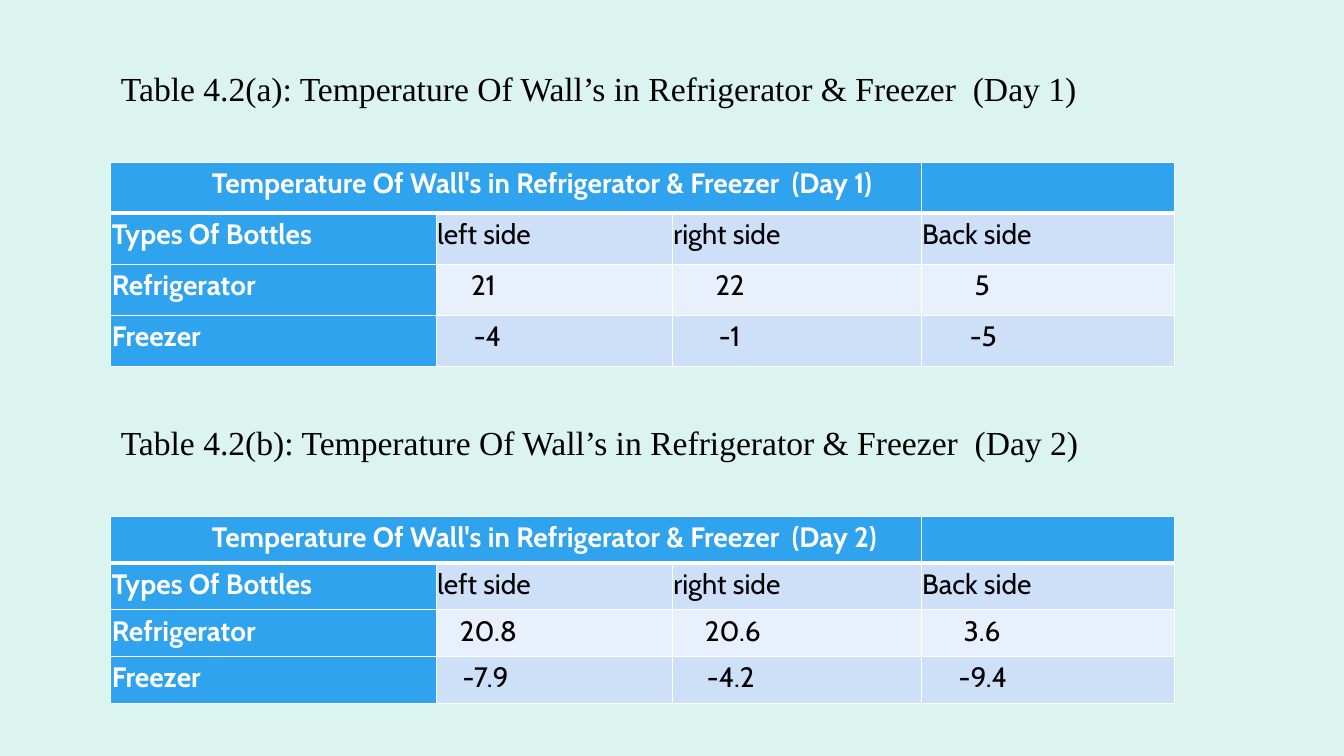
from dataclasses import dataclass

from lxml import etree
from pptx import Presentation
from pptx.dml.color import RGBColor
from pptx.enum.text import MSO_ANCHOR, MSO_AUTO_SIZE, PP_ALIGN
from pptx.oxml.ns import qn
from pptx.util import Pt


@dataclass(frozen=True)
class Theme:
    backdrop: str = "DBF4EF"
    header: str = "2FA3EE"
    band_dark: str = "CDE0F8"
    band_light: str = "E8F0FC"
    white: str = "FFFFFF"
    black: str = "000000"
    caption_font: str = "Times New Roman"
    table_font: str = "Cabin"
    caption_size: int = 24
    table_size: int = 20


THEME = Theme()
LEFT, WIDTH = 79.2, 759.6
COLUMN_WIDTHS = (232.6, 168.5, 177.8, 180.7)
HEADER_INDENT = 71.5
SIDES = ("left side", "right side", "Back side")

# Readings are (value, indent in points) for the three walls.
DAYS = (
    {"letter": "a", "caption_top": 44.6, "table_top": 116, "row_height": 36.4,
     "refrigerator": (("21", 24), ("22", 30), ("5", 37.5)),
     "freezer": (("-4", 26), ("-1", 32.5), ("-5", 34))},
    {"letter": "b", "caption_top": 297.5, "table_top": 368.7, "row_height": 33.4,
     "refrigerator": (("20.8", 16), ("20.6", 22.5), ("3.6", 29.5)),
     "freezer": (("-7.9", 18), ("-4.2", 24), ("-9.4", 26))},
)


def style_font(para, name, size, color, bold=False):
    font = para.font
    font.name, font.size, font.bold = name, Pt(size), bold
    font.color.rgb = RGBColor.from_string(color)


def add_caption(shape, text, top):
    shape.left, shape.top = Pt(LEFT), Pt(top)
    shape.width, shape.height = Pt(WIDTH), Pt(36.4)
    frame = shape.text_frame
    frame.word_wrap = True
    frame.auto_size = MSO_AUTO_SIZE.SHAPE_TO_FIT_TEXT
    frame.vertical_anchor = MSO_ANCHOR.TOP
    para = frame.paragraphs[0]
    para.text = text
    para.alignment = PP_ALIGN.LEFT
    style_font(para, THEME.caption_font, THEME.caption_size, THEME.black)


def set_borders(cell, top, bottom):
    """Draw white borders, with the top and bottom widths in points."""
    properties = cell._tc.get_or_add_tcPr()
    widths = (("lnL", 1), ("lnR", 1), ("lnT", top), ("lnB", bottom))
    for index, (tag, width) in enumerate(widths):
        line = etree.Element(qn(f"a:{tag}"), w=str(Pt(width)))
        fill = etree.SubElement(line, qn("a:solidFill"))
        etree.SubElement(fill, qn("a:srgbClr"), val=THEME.white)
        properties.insert(index, line)


def fill_cell(cell, text, indent, row, column):
    is_header = row == 0 or column == 0
    band = THEME.band_light if row == 2 else THEME.band_dark
    cell.fill.solid()
    cell.fill.fore_color.rgb = RGBColor.from_string(THEME.header if is_header else band)
    cell.margin_left, cell.margin_right = Pt(0.7), Pt(5.8)
    cell.margin_top, cell.margin_bottom = Pt(1.4), Pt(0)
    para = cell.text_frame.paragraphs[0]
    para.text = text
    para.line_spacing = 1.07
    para._p.get_or_add_pPr().set("marL", str(Pt(indent)))
    style_font(para, THEME.table_font, THEME.table_size,
               THEME.white if is_header else THEME.black, is_header)
    set_borders(cell, 3 if row == 1 else 1, 3 if row == 0 else 1)


def add_readings_table(page, heading, day):
    rows = (
        ((heading, HEADER_INDENT), ("", 0), ("", 0), ("", 0)),
        (("Types Of Bottles", 0), *((side, 0) for side in SIDES)),
        (("Refrigerator", 0), *day["refrigerator"]),
        (("Freezer", 0), *day["freezer"]),
    )
    height = day["row_height"]
    table = page.shapes.add_table(
        len(rows), len(COLUMN_WIDTHS), Pt(LEFT), Pt(day["table_top"]),
        Pt(WIDTH), Pt(height * len(rows))).table
    for column, width in zip(table.columns, COLUMN_WIDTHS):
        column.width = Pt(width)
    for r, values in enumerate(rows):
        table.rows[r].height = Pt(height)
        for c, (text, indent) in enumerate(values):
            fill_cell(table.cell(r, c), text, indent, r, c)
    table.cell(0, 0).merge(table.cell(0, 2))


def build_temperature_page(deck):
    page = deck.slides.add_slide(deck.slide_layouts[5])
    background = page.background.fill
    background.solid()
    background.fore_color.rgb = RGBColor.from_string(THEME.backdrop)
    for number, day in enumerate(DAYS, start=1):
        subject = f"in Refrigerator & Freezer  (Day {number})"
        caption = page.shapes.title if number == 1 else page.shapes.add_textbox(0, 0, 0, 0)
        add_caption(caption, f"Table 4.2({day['letter']}): Temperature Of Wall’s {subject}",
                    day["caption_top"])
        add_readings_table(page, f"Temperature Of Wall's {subject}", day)


def main():
    deck = Presentation()
    deck.slide_width, deck.slide_height = Pt(960), Pt(540)
    build_temperature_page(deck)
    deck.save("out.pptx")


if __name__ == "__main__":
    main()
